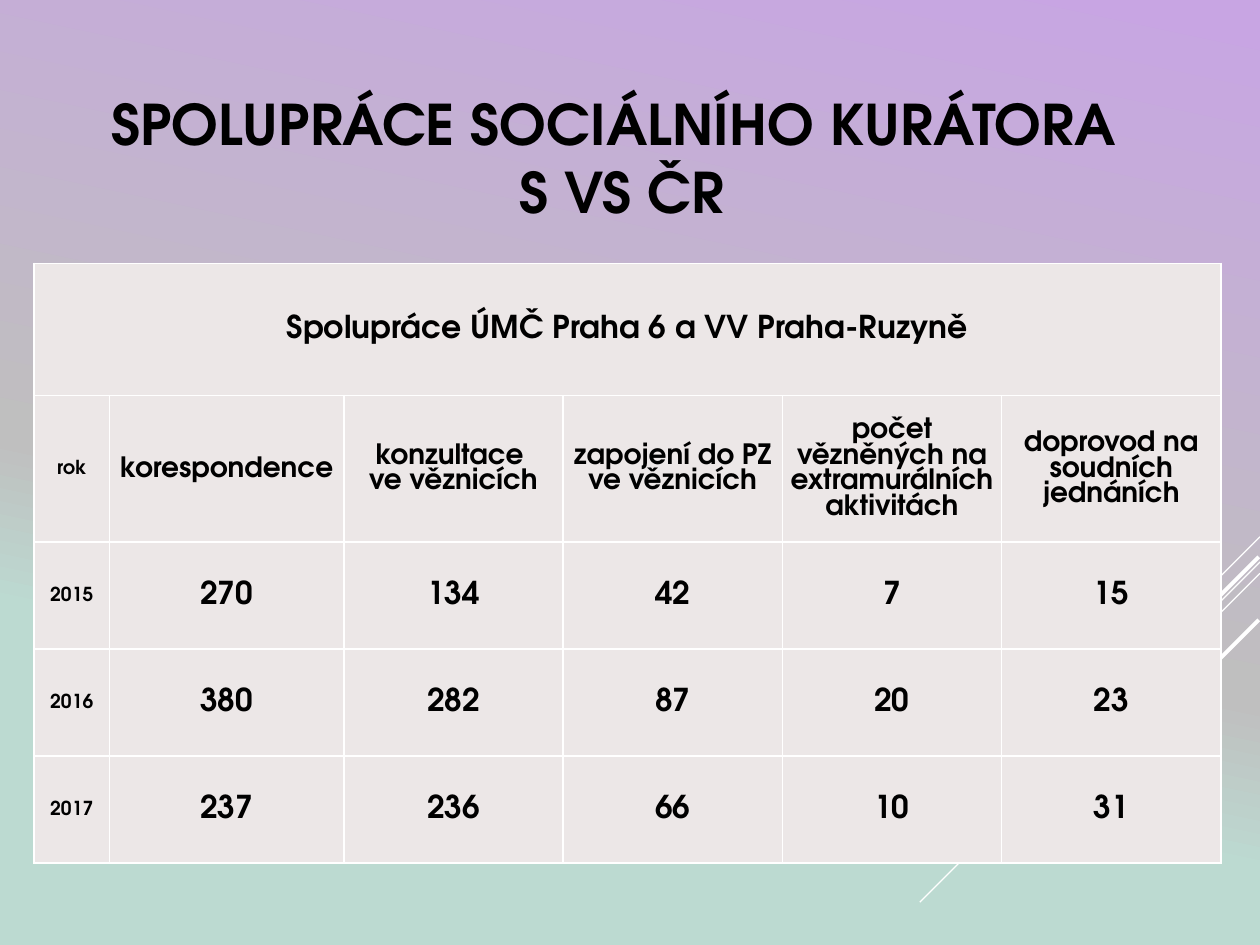
from copy import deepcopy

from lxml.etree import SubElement
from pptx import Presentation
from pptx.dml.color import RGBColor
from pptx.enum.shapes import MSO_CONNECTOR
from pptx.enum.text import MSO_ANCHOR, PP_ALIGN
from pptx.oxml.ns import qn
from pptx.util import Inches, Pt

FONT = "TeX Gyre Adventor"
COLORS = {
    "text": "000000",
    "line": "FFFFFF",
    "cell": "ECE7E7",
    "violet": "C8A5E3",
    "grey": "BFBFBF",
    "mint": "BCDAD1",
}
TITLE = "SPOLUPRÁCE SOCIÁLNÍHO KURÁTORA \vS VS ČR"
CAPTION = "Spolupráce ÚMČ Praha 6 a VV Praha-Ruzyně"
HEADINGS = [
    "rok",
    "korespondence",
    "konzultace \nve věznicích",
    "zapojení do PZ ve věznicích",
    "počet vězněných na extramurálních aktivitách",
    "doprovod na soudních jednáních",
]
YEARS = [
    (2015, 270, 134, 42, 7, 15),
    (2016, 380, 282, 87, 20, 23),
    (2017, 237, 236, 66, 10, 31),
]
COLUMN_WIDTHS = [0.6, 1.86] + [1.74] * 4
ROW_HEIGHTS = [1.05, 1.16] + [0.85] * 3
# Right end, top, horizontal run and weight of each 45-degree line
DIAGONALS = [
    (10, 4.26, 0.83, 0.75),
    (10, 4.46, 2.7, 0.75),
    (10, 4.55, 1.72, 0.75),
    (9.99, 4.42, 1.57, 2.25),
    (9.99, 4.92, 1.14, 2.25),
]


def color(name):
    return RGBColor.from_string(COLORS[name])


def paint_background(page):
    fill = page.background.fill
    fill.gradient()
    fill.gradient_angle = 258
    first = fill._fill._gradFill.gsLst[0]
    first.addnext(deepcopy(first))
    stops = [(0.01, "violet"), (0.58, "grey"), (0.72, "mint")]
    for stop, (position, name) in zip(fill.gradient_stops, stops):
        stop.position = position
        stop.color.rgb = color(name)


def add_diagonals(page):
    for right, top, run, weight in DIAGONALS:
        line = page.shapes.add_connector(
            MSO_CONNECTOR.STRAIGHT, Inches(right), Inches(top),
            Inches(right - run), Inches(top + run))
        line.line.color.rgb = color("line")
        line.line.width = Pt(weight)
        SubElement(line._element.spPr, qn("a:effectLst"))


def style_text(frame, size):
    for para in frame.paragraphs:
        para.alignment = PP_ALIGN.CENTER
        para.font.name = FONT
        para.font.size = Pt(size)
        para.font.bold = True
        para.font.color.rgb = color("text")


def add_title(page, left, top, width, height):
    box = page.shapes.add_textbox(
        Inches(left), Inches(top), Inches(width), Inches(height))
    frame = box.text_frame
    frame.word_wrap = True
    frame.vertical_anchor = MSO_ANCHOR.BOTTOM
    frame.text = TITLE
    style_text(frame, 32)


def add_borders(cell):
    properties = cell._tc.get_or_add_tcPr()
    for index, side in enumerate(("a:lnL", "a:lnR", "a:lnT", "a:lnB")):
        border = SubElement(properties, qn(side), w=str(Pt(1)))
        solid = SubElement(border, qn("a:solidFill"))
        SubElement(solid, qn("a:srgbClr"), val=COLORS["line"])
        properties.insert(index, border)  # borders precede the fill


def fill_cell(cell, text, size):
    cell.text = text
    cell.vertical_anchor = MSO_ANCHOR.MIDDLE
    cell.margin_left = cell.margin_right = cell.margin_top = Inches(0.01)
    cell.margin_bottom = 0
    cell.fill.solid()
    cell.fill.fore_color.rgb = color("cell")
    add_borders(cell)
    style_text(cell.text_frame, size)


def add_cooperation_table(page, left, top):
    rows = [[CAPTION] + [""] * 5, HEADINGS, *YEARS]
    table = page.shapes.add_table(
        len(rows), len(HEADINGS), Inches(left), Inches(top),
        Inches(sum(COLUMN_WIDTHS)), Inches(sum(ROW_HEIGHTS))).table
    for column, width in zip(table.columns, COLUMN_WIDTHS):
        column.width = Inches(width)
    for r, (values, height) in enumerate(zip(rows, ROW_HEIGHTS)):
        table.rows[r].height = Inches(height)
        for c, value in enumerate(values):
            if r and c == 0:
                size = 11
            else:
                size = 16 if r == 1 else 18
            fill_cell(table.cell(r, c), str(value), size)
    table.cell(0, 0).merge(table.cell(0, len(HEADINGS) - 1))


def main():
    deck = Presentation()
    deck.slide_width, deck.slide_height = Inches(10), Inches(7.5)
    page = deck.slides.add_slide(deck.slide_layouts[6])
    paint_background(page)
    add_diagonals(page)
    add_title(page, 0.58, 0.47, 8.71, 1.36)
    add_cooperation_table(page, 0.27, 2.09)
    deck.save("out.pptx")


if __name__ == "__main__":
    main()
